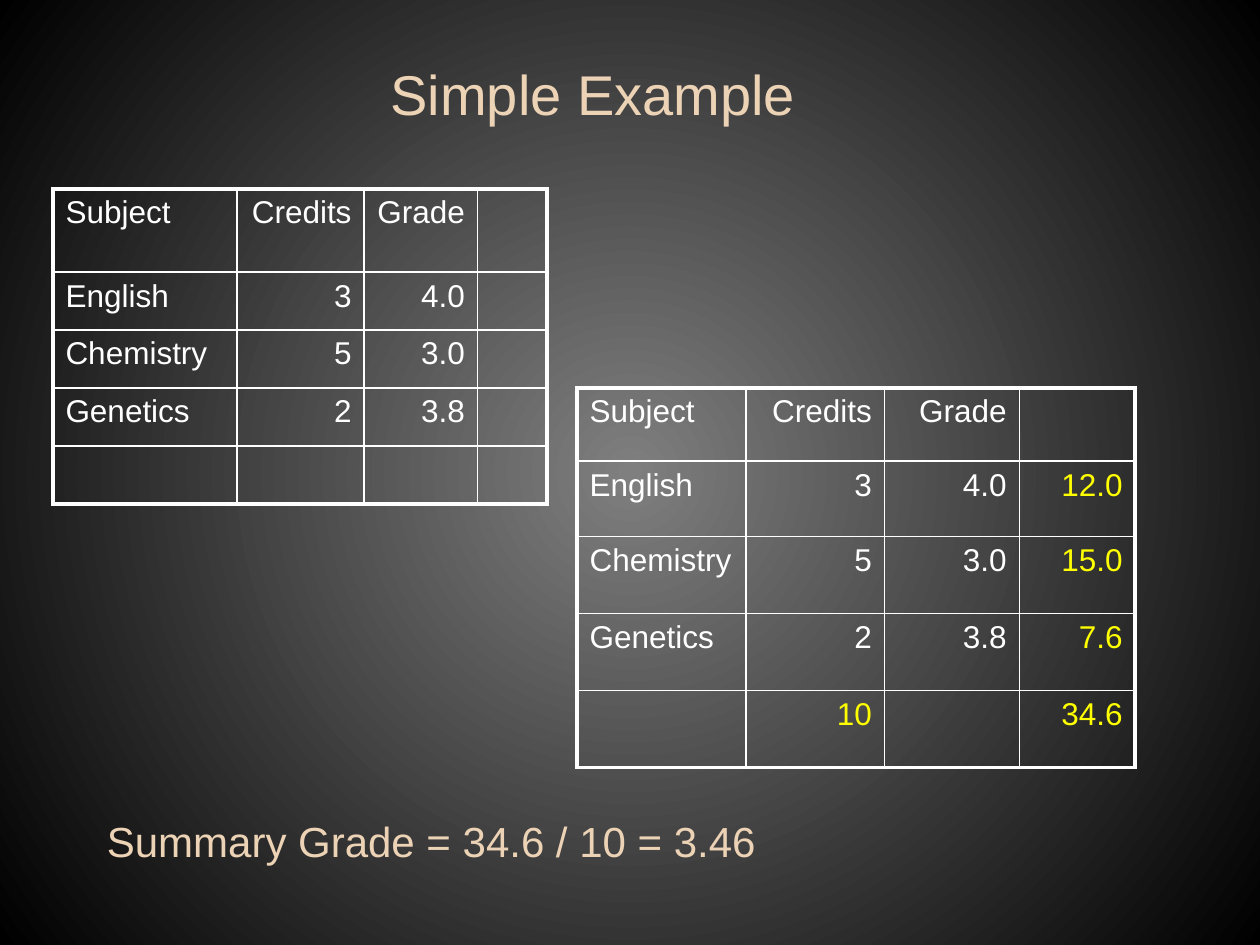
from dataclasses import dataclass

import lxml.etree
import pptx
import pptx.dml.color
import pptx.enum.text
import pptx.oxml.ns
import pptx.util

Inches, Pt = pptx.util.Inches, pptx.util.Pt
RGB = pptx.dml.color.RGBColor.from_string
ALIGN = pptx.enum.text.PP_ALIGN
qn = pptx.oxml.ns.qn


@dataclass(frozen=True)
class Theme:
    font: str = "Arial"
    heading: str = "EDD3B6"
    text: str = "FFFFFF"
    result: str = "FFFF00"
    glow: str = "7F7F7F"
    edge: str = "000000"
    title_size: int = 32
    summary_size: int = 24
    table_size: int = 18
    outer_line: float = 2.25
    inner_line: float = 1


THEME = Theme()
HEADER = ["Subject", "Credits", "Grade", ""]
COURSES = [["English", "3", "4.0"], ["Chemistry", "5", "3.0"], ["Genetics", "2", "3.8"]]
POINTS = ["12.0", "15.0", "7.6"]


def write(tf, text, size, color, align=ALIGN.LEFT):
    p = tf.paragraphs[0]
    p.alignment = align
    r = p.add_run()
    r.text = text
    r.font.name, r.font.size, r.font.bold = THEME.font, Pt(size), False
    r.font.color.rgb = RGB(color)
    return p


def set_background(s):
    """Radial glow from the centre of the slide."""
    fill = s.background.fill
    fill.gradient()
    for stop, color in zip(fill.gradient_stops, (THEME.glow, THEME.edge)):
        stop.color.rgb = RGB(color)
    grad = s.element.find(".//" + qn("a:gradFill"))
    grad.remove(grad.find(qn("a:lin")))
    circle = lxml.etree.SubElement(grad, qn("a:path"), path="circle")
    lxml.etree.SubElement(circle, qn("a:fillToRect"),
                          dict.fromkeys("ltrb", "50000"))


def place_heading(sp, text, box, size):
    sp.left, sp.top, sp.width, sp.height = map(Inches, box)
    tf = sp.text_frame
    tf.word_wrap = False
    tf.auto_size = pptx.enum.text.MSO_AUTO_SIZE.SHAPE_TO_FIT_TEXT
    tf.vertical_anchor = pptx.enum.text.MSO_ANCHOR.TOP
    write(tf, text, size, THEME.heading)


def set_borders(cell, outer_sides):
    tcPr = cell._tc.get_or_add_tcPr()
    for side in "LRTB":
        width = THEME.outer_line if side in outer_sides else THEME.inner_line
        ln = lxml.etree.SubElement(tcPr, qn("a:ln" + side), w=str(Pt(width)))
        solid = lxml.etree.SubElement(ln, qn("a:solidFill"))
        lxml.etree.SubElement(solid, qn("a:srgbClr"), val=THEME.text)


def add_grade_table(s, box, rows, widths, heights, results=()):
    """Grid with a heavy frame; cells listed in results are highlighted."""
    frame = s.shapes.add_table(len(rows), len(widths), *map(Inches, box))
    table = frame.table
    table.first_row = table.horz_banding = False
    for col, width in zip(table.columns, widths):
        col.width = Inches(width)
    for row, height in zip(table.rows, heights):
        row.height = Inches(height)
    last_row, last_col = len(rows) - 1, len(widths) - 1
    for i, row in enumerate(rows):
        for j, text in enumerate(row):
            cell = table.cell(i, j)
            edges = {"T": i == 0, "B": i == last_row, "L": j == 0, "R": j == last_col}
            set_borders(cell, [side for side, outer in edges.items() if outer])
            cell.fill.background()
            if text:
                color = THEME.result if (i, j) in results else THEME.text
                p = write(cell.text_frame, text, THEME.table_size, color,
                          ALIGN.RIGHT if j else ALIGN.LEFT)
                # Space before as a share of the type size
                space = lxml.etree.SubElement(p._p.get_or_add_pPr(), qn("a:spcBef"))
                lxml.etree.SubElement(space, qn("a:spcPct"), val="20000")


def main():
    prs = pptx.Presentation()
    prs.slide_width, prs.slide_height = Inches(10), Inches(7.5)
    s = prs.slides.add_slide(prs.slide_layouts[5])
    set_background(s)

    # Courses as given
    add_grade_table(s, (0.42, 1.5, 3.92, 2.5),
                    [HEADER, *[c + [""] for c in COURSES], [""] * 4],
                    widths=[1.46, 1.01, 0.9, 0.55],
                    heights=[0.66] + [0.46] * 4)

    # Title
    place_heading(s.shapes.title, "Simple Example", (3, 0.42, 3.44, 0.64),
                  THEME.title_size)

    # Courses with weighted points and totals
    add_grade_table(s, (4.58, 3.08, 4.43, 3.01),
                    [HEADER, *[c + [pts] for c, pts in zip(COURSES, POINTS)],
                     ["", "10", "", "34.6"]],
                    widths=[1.34, 1.1, 1.07, 0.92],
                    heights=[0.58, 0.6] + [0.61] * 3,
                    results={(1, 3), (2, 3), (3, 3), (4, 1), (4, 3)})

    # Summary
    box = (0.75, 6.42, 5.4, 0.5)
    place_heading(s.shapes.add_textbox(*map(Inches, box)),
                  "Summary Grade = 34.6 / 10 = 3.46", box, THEME.summary_size)

    prs.save("out.pptx")


if __name__ == "__main__":
    main()
